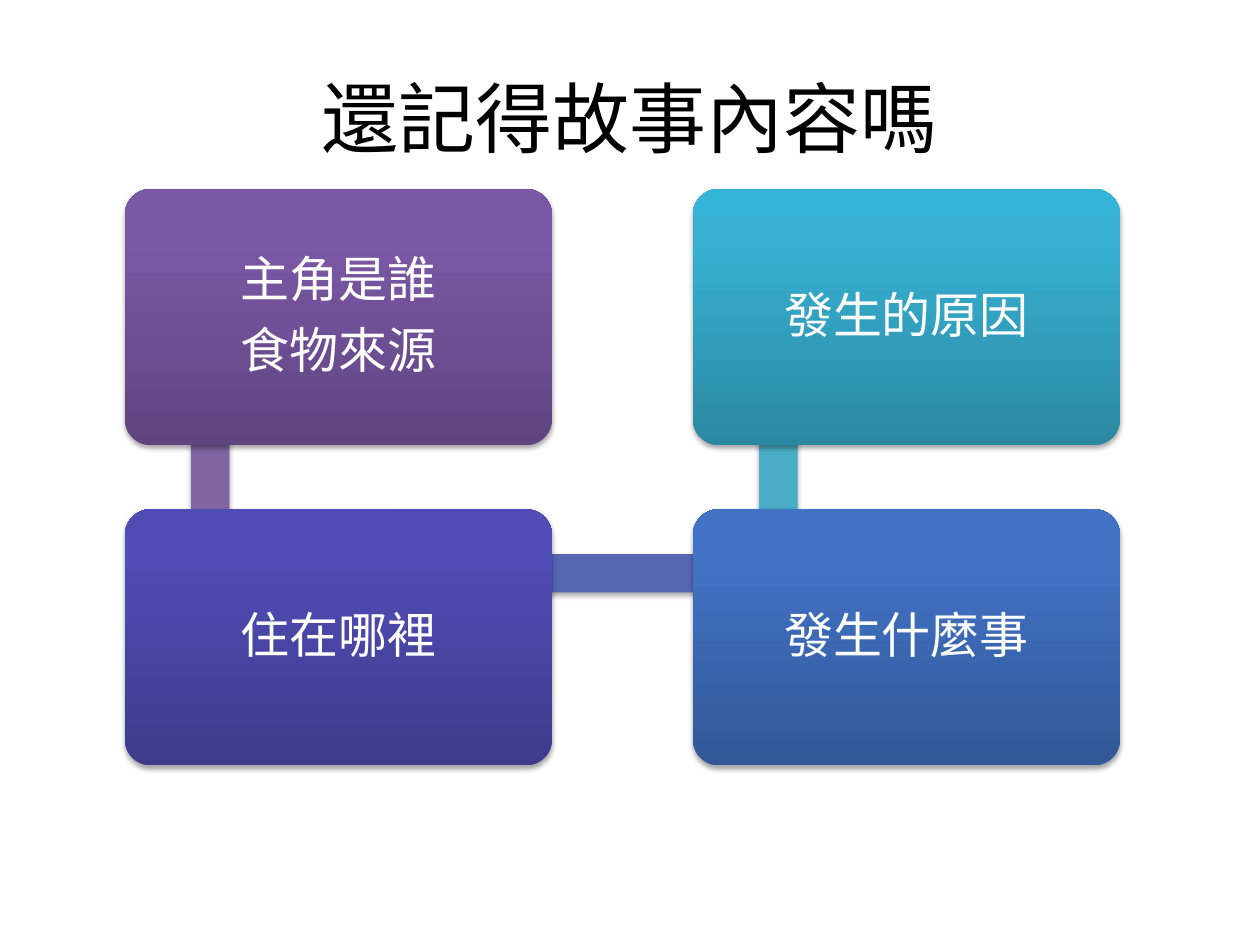
from copy import deepcopy
from dataclasses import dataclass

from lxml.etree import SubElement
from pptx import Presentation
from pptx.dml.color import RGBColor
from pptx.enum.shapes import MSO_SHAPE
from pptx.enum.text import MSO_ANCHOR, PP_ALIGN
from pptx.oxml.ns import qn
from pptx.util import Pt


@dataclass(frozen=True)
class Theme:
    font: str = "Noto Sans CJK JP"
    title_size: int = 44
    box_size: int = 28
    title_color: str = "000000"
    box_text: str = "FFFFFF"
    shadow: str = "000000"
    # Each gradient runs from the bottom of the box to the top
    purple: tuple = ("5F4480", "7B58A6", "7C57A8")
    indigo: tuple = ("3E3B8B", "504CB5", "4F4BB8")
    blue: tuple = ("325897", "4172C4", "3F72C7")
    teal: tuple = ("2A88A2", "37B1D2", "34B4D6")
    bars: tuple = ("8064A2", "5767B4", "4BACC6")


THEME = Theme()
STOPS = (0, 0.8, 1)

# Grid of the story boxes
LEFT, TOP = 71.4, 108
BOX_WIDTH, BOX_HEIGHT = 244, 146.4
COLUMN_STEP, ROW_STEP = 324.6, 183
BAR_THICKNESS = 22
BOX_INSET = 8.8

# Text, column, row and gradient, in reading order along the path
STEPS = (
    ("主角是誰\n食物來源", 0, 0, THEME.purple),
    ("住在哪裡", 0, 1, THEME.indigo),
    ("發生什麼事", 1, 1, THEME.blue),
    ("發生的原因", 1, 0, THEME.teal),
)


def write_text(text_frame, text, size, color):
    text_frame.word_wrap = True
    text_frame.vertical_anchor = MSO_ANCHOR.MIDDLE
    text_frame.text = text
    for paragraph in text_frame.paragraphs:
        paragraph.alignment = PP_ALIGN.CENTER
        for run in paragraph.runs:
            run.font.name = THEME.font
            run.font.size = Pt(size)
            run.font.color.rgb = RGBColor.from_string(color)
            SubElement(run.font._element, qn("a:ea"), typeface=THEME.font)


def add_shadow(shape):
    shape.shadow.inherit = False
    effects = shape._element.spPr.find(qn("a:effectLst"))
    shadow = SubElement(effects, qn("a:outerShdw"), blurRad=str(Pt(3.1)),
                        dist=str(Pt(1.8)), dir="5400000", rotWithShape="0")
    color = SubElement(shadow, qn("a:srgbClr"), val=THEME.shadow)
    SubElement(color, qn("a:alpha"), val="35000")


def fill_gradient(shape, colors):
    shape.fill.gradient()
    shape.fill.gradient_angle = 90
    first_stop = shape.fill._fill._gradFill.gsLst[0]
    first_stop.addnext(deepcopy(first_stop))
    for stop, position, color in zip(shape.fill.gradient_stops, STOPS, colors):
        stop.position = position
        stop.color.rgb = RGBColor.from_string(color)


def space_paragraphs(text_frame):
    for paragraph in text_frame.paragraphs:
        paragraph.line_spacing = 0.9
        paragraph.space_after = Pt(0)
        # Space after as a share of the type size
        space = paragraph._p.pPr.find(qn("a:spcAft"))
        space.clear()
        SubElement(space, qn("a:spcPct"), val="35000")


def add_title(slide, text):
    title = slide.shapes.add_textbox(Pt(36), Pt(21.6), Pt(648), Pt(90))
    write_text(title.text_frame, text, THEME.title_size, THEME.title_color)


def add_bar(slide, start, end, color):
    """Join the anchor points of two boxes with a flat bar."""
    (left, right), (top, bottom) = (sorted(pair) for pair in zip(start, end))
    if left == right:
        left, right = left - BAR_THICKNESS / 2, right + BAR_THICKNESS / 2
    else:
        top, bottom = top - BAR_THICKNESS / 2, bottom + BAR_THICKNESS / 2
    bar = slide.shapes.add_shape(MSO_SHAPE.RECTANGLE, Pt(left), Pt(top),
                                 Pt(right - left), Pt(bottom - top))
    bar.fill.solid()
    bar.fill.fore_color.rgb = RGBColor.from_string(color)
    bar.line.fill.background()
    add_shadow(bar)


def add_box(slide, text, left, top, colors):
    box = slide.shapes.add_shape(MSO_SHAPE.ROUNDED_RECTANGLE, Pt(left), Pt(top),
                                 Pt(BOX_WIDTH), Pt(BOX_HEIGHT))
    box.adjustments[0] = 0.1
    fill_gradient(box, colors)
    box.line.fill.background()
    add_shadow(box)
    frame = box.text_frame
    frame.margin_left = frame.margin_right = Pt(BOX_INSET)
    frame.margin_top = frame.margin_bottom = Pt(BOX_INSET)
    write_text(frame, text, THEME.box_size, THEME.box_text)
    space_paragraphs(frame)


def main():
    presentation = Presentation()
    presentation.slide_width, presentation.slide_height = Pt(720), Pt(540)
    slide = presentation.slides.add_slide(presentation.slide_layouts[6])

    add_title(slide, "還記得故事內容嗎")

    # Story path: each bar lies behind the box it leaves and the next one
    corners = [(LEFT + column * COLUMN_STEP, TOP + row * ROW_STEP)
               for _, column, row, _ in STEPS]
    anchors = [(left + 0.2 * BOX_WIDTH, top + 0.25 * BOX_HEIGHT)
               for left, top in corners]
    for index, (text, _, _, colors) in enumerate(STEPS):
        if index < len(THEME.bars):
            add_bar(slide, anchors[index], anchors[index + 1], THEME.bars[index])
        add_box(slide, text, *corners[index], colors)

    presentation.save("out.pptx")


if __name__ == "__main__":
    main()
